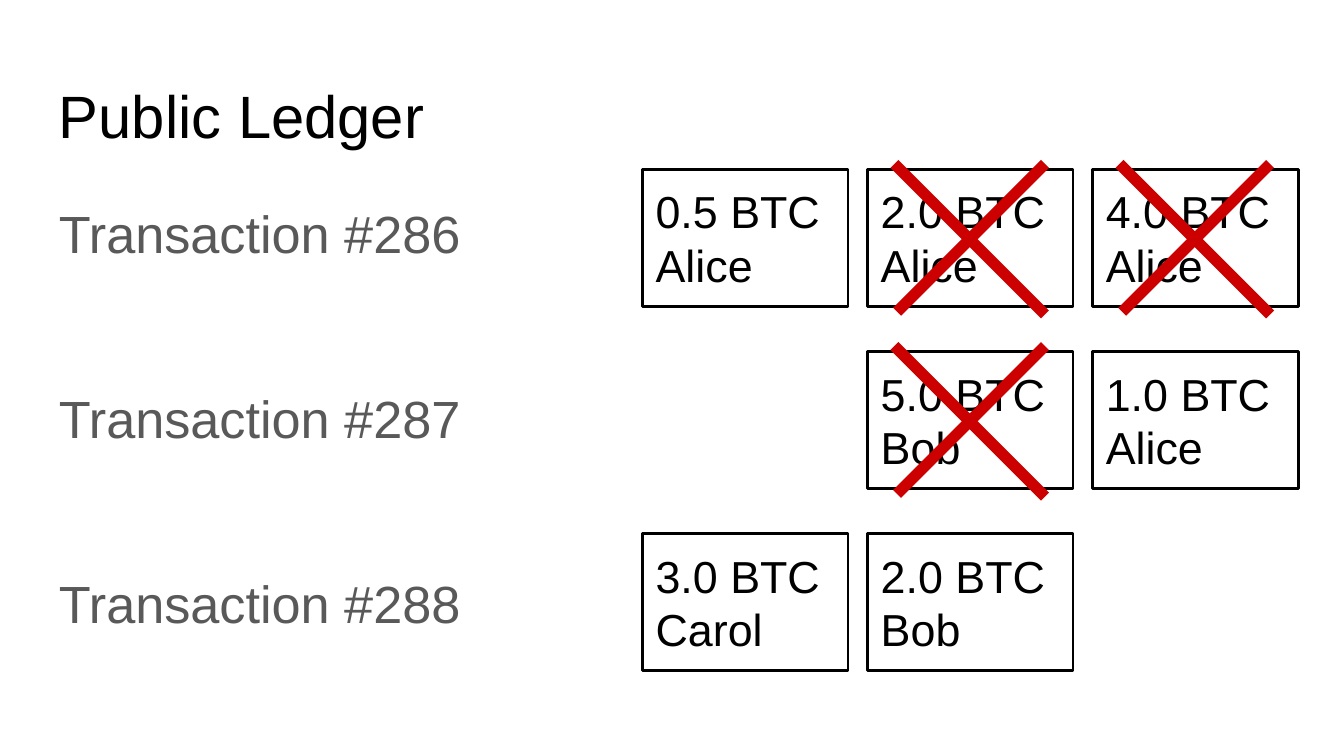
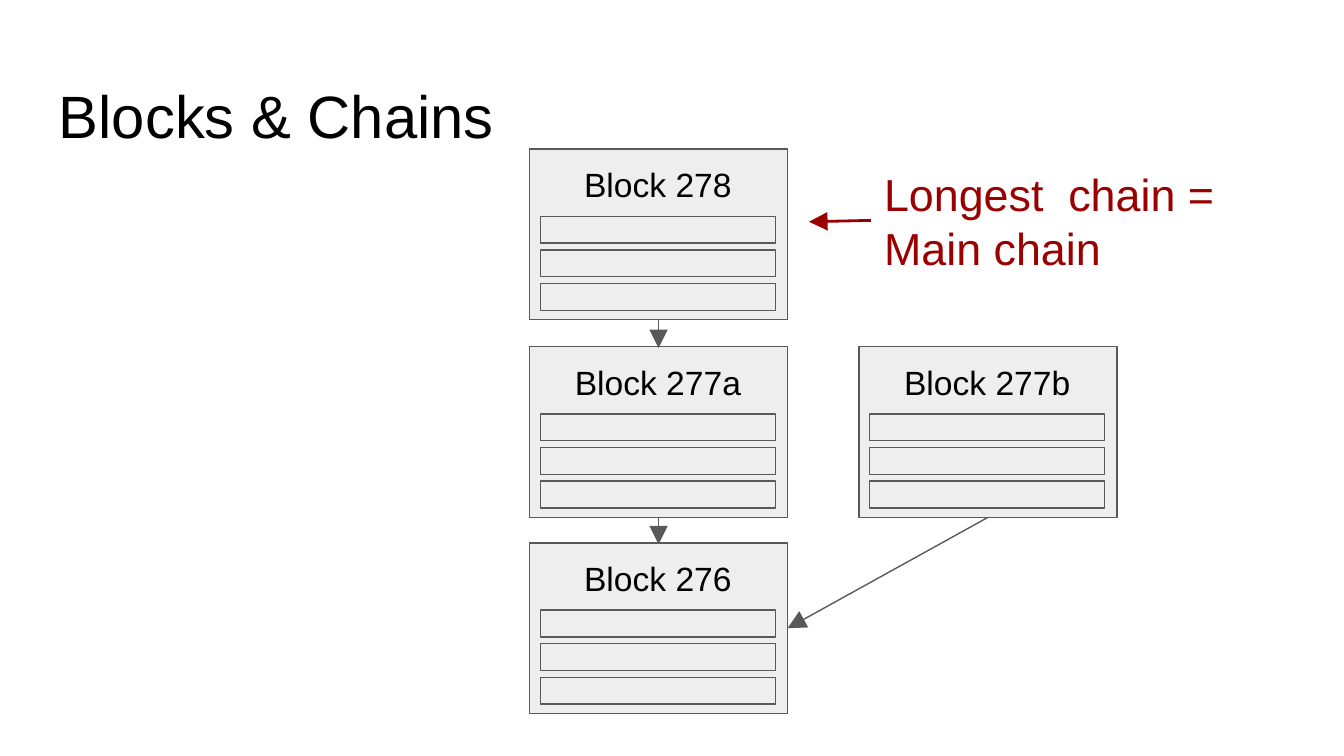
from dataclasses import dataclass

from lxml import etree
from pptx import Presentation
from pptx import util as u
from pptx.dml import color
from pptx.enum import shapes, text
from pptx.oxml import ns


@dataclass(frozen=True)
class Theme:
    font: str = "Arial"
    paper: str = "FFFFFF"
    ink: str = "000000"
    grey: str = "595959"
    panel: str = "EEEEEE"
    cross: str = "CC0000"
    accent: str = "990000"
    title_size: int = 32
    body_size: int = 28
    note_size: int = 24
    label_size: int = 18


THEME = Theme()

# Ledger grid: None leaves a cell empty, True marks a spent output
LEDGER = [
    [("0.5 BTC", "Alice", False), ("2.0 BTC", "Alice", True), ("4.0 BTC", "Alice", True)],
    [None, ("5.0 BTC", "Bob", True), ("1.0 BTC", "Alice", False)],
    [("3.0 BTC", "Carol", False), ("2.0 BTC", "Bob", False), None],
]
LEDGER_LEFT, LEDGER_TOP = 4.78, 1.26
LEDGER_RIGHT, LEDGER_BOTTOM = 8.13, 3.97
COLUMN_STEP = (LEDGER_RIGHT - LEDGER_LEFT) / 2
ROW_STEP = (LEDGER_BOTTOM - LEDGER_TOP) / 2
OUTPUT_WIDTH, OUTPUT_HEIGHT = 1.53, 1.02

# Block chain
BLOCK_WIDTH, BLOCK_HEIGHT = 1.92, 1.27
MAIN_LEFT, FORK_LEFT = 3.94, 6.39
BLOCK_TOPS = [1.11, 2.58, 4.04]
MAIN_BLOCKS = ["Block 278", "Block 277a", "Block 276"]


def rgb(colour):
    return color.RGBColor.from_string(colour)


def write(box, lines, size, colour=THEME.ink, align=text.PP_ALIGN.LEFT,
          anchor=text.MSO_ANCHOR.TOP, space_after=0):
    """Fill a shape with one paragraph per line."""
    frame = box.text_frame
    frame.word_wrap = True
    frame.vertical_anchor = anchor
    frame.margin_left = frame.margin_right = u.Inches(0.1)
    frame.margin_top = frame.margin_bottom = u.Inches(0.1)
    for index, line in enumerate(lines):
        para = frame.paragraphs[0] if index == 0 else frame.add_paragraph()
        para.alignment = align
        para.space_after = u.Pt(space_after)
        span = para.add_run()
        span.text = line
        span.font.name = THEME.font
        span.font.size = u.Pt(size)
        span.font.color.rgb = rgb(colour)


def add_text(page, left, top, width, height, lines, size, **style):
    box = page.shapes.add_textbox(u.Inches(left), u.Inches(top),
                                  u.Inches(width), u.Inches(height))
    write(box, lines, size, **style)


def add_rect(page, left, top, width, height, line, line_width, fill=None):
    box = page.shapes.add_shape(shapes.MSO_SHAPE.RECTANGLE, u.Inches(left), u.Inches(top),
                                u.Inches(width), u.Inches(height))
    box.shadow.inherit = False
    if fill:
        box.fill.solid()
        box.fill.fore_color.rgb = rgb(fill)
    else:
        box.fill.background()
    box.line.color.rgb = rgb(line)
    box.line.width = u.Pt(line_width)
    return box


def add_line(page, start, end, colour, width, arrow=False):
    line = page.shapes.add_connector(shapes.MSO_CONNECTOR.STRAIGHT,
                                     *(u.Inches(value) for value in (*start, *end)))
    line.line.color.rgb = rgb(colour)
    line.line.width = u.Pt(width)
    if arrow:
        outline = line.line._get_or_add_ln()
        etree.SubElement(outline, ns.qn("a:tailEnd"), type="triangle", w="lg", len="lg")
    etree.SubElement(line._element.spPr, ns.qn("a:effectLst"))


def add_page(deck, title):
    page = deck.slides.add_slide(deck.slide_layouts[6])
    page.background.fill.solid()
    page.background.fill.fore_color.rgb = rgb(THEME.paper)
    add_text(page, 0.34, 0.49, 9.32, 0.63, [title], THEME.title_size)
    return page


def add_output(page, left, top, amount, owner):
    box = add_rect(page, left, top, OUTPUT_WIDTH, OUTPUT_HEIGHT, THEME.ink, 1.5)
    write(box, [amount, owner], THEME.note_size, anchor=text.MSO_ANCHOR.MIDDLE)


def add_cross(page, left, top):
    """Strike out the output whose corner is at left, top."""
    x, y, size = left + 0.2, top - 0.04, 1.12
    add_line(page, (x, y), (x + size, y + size), THEME.cross, 6)
    add_line(page, (x + size, y), (x + 0.02, y + size - 0.02), THEME.cross, 6)


def add_block(page, left, top, name):
    add_rect(page, left, top, BLOCK_WIDTH, BLOCK_HEIGHT, THEME.grey, 0.75, THEME.panel)
    inner_left, inner_width = left + 0.08, 1.75
    for row in range(3):
        add_rect(page, inner_left, top + 0.5 + 0.25 * row, inner_width, 0.2,
                 THEME.grey, 0.75, THEME.panel)
    add_text(page, inner_left, top + 0.01, inner_width, 0.29, [name], THEME.label_size,
             align=text.PP_ALIGN.CENTER)


def build_ledger(deck):
    page = add_page(deck, "Public Ledger")
    names = [f"Transaction #{number}" for number in range(286, 289)]
    add_text(page, 0.34, 1.4, 4.08, 3.74, names, THEME.body_size,
             colour=THEME.grey, space_after=65.5)

    # Outputs first, so that the crosses lie on top
    spent_corners = []
    for row, outputs in enumerate(LEDGER):
        for column, output in enumerate(outputs):
            if output is None:
                continue
            amount, owner, spent = output
            corner = (LEDGER_LEFT + COLUMN_STEP * column, LEDGER_TOP + ROW_STEP * row)
            add_output(page, *corner, amount, owner)
            if spent:
                spent_corners.append(corner)
    for corner in spent_corners:
        add_cross(page, *corner)


def build_chain(deck):
    page = add_page(deck, "Blocks & Chains")
    for name, top in zip(MAIN_BLOCKS, BLOCK_TOPS):
        add_block(page, MAIN_LEFT, top, name)
    add_block(page, FORK_LEFT, BLOCK_TOPS[1], "Block 277b")

    # Links from each block to its parent
    middle = MAIN_LEFT + BLOCK_WIDTH / 2
    for top, parent_top in zip(BLOCK_TOPS, BLOCK_TOPS[1:]):
        add_line(page, (middle, top + BLOCK_HEIGHT), (middle, parent_top + 0.01),
                 THEME.grey, 0.75, arrow=True)
    add_line(page, (FORK_LEFT + BLOCK_WIDTH / 2, BLOCK_TOPS[1] + BLOCK_HEIGHT),
             (MAIN_LEFT + BLOCK_WIDTH, BLOCK_TOPS[2] + BLOCK_HEIGHT / 2),
             THEME.grey, 0.75, arrow=True)

    # Note on the main chain
    add_text(page, 6.48, 1.14, 2.8, 1.01, ["Longest  chain = Main chain"],
             THEME.note_size, colour=THEME.accent)
    add_line(page, (6.48, 1.64), (6.02, 1.65), THEME.accent, 1.5, arrow=True)


def main():
    deck = Presentation()
    deck.slide_width = u.Inches(10)
    deck.slide_height = deck.slide_width * 9 // 16
    build_ledger(deck)
    build_chain(deck)
    deck.save("out.pptx")


if __name__ == "__main__":
    main()
